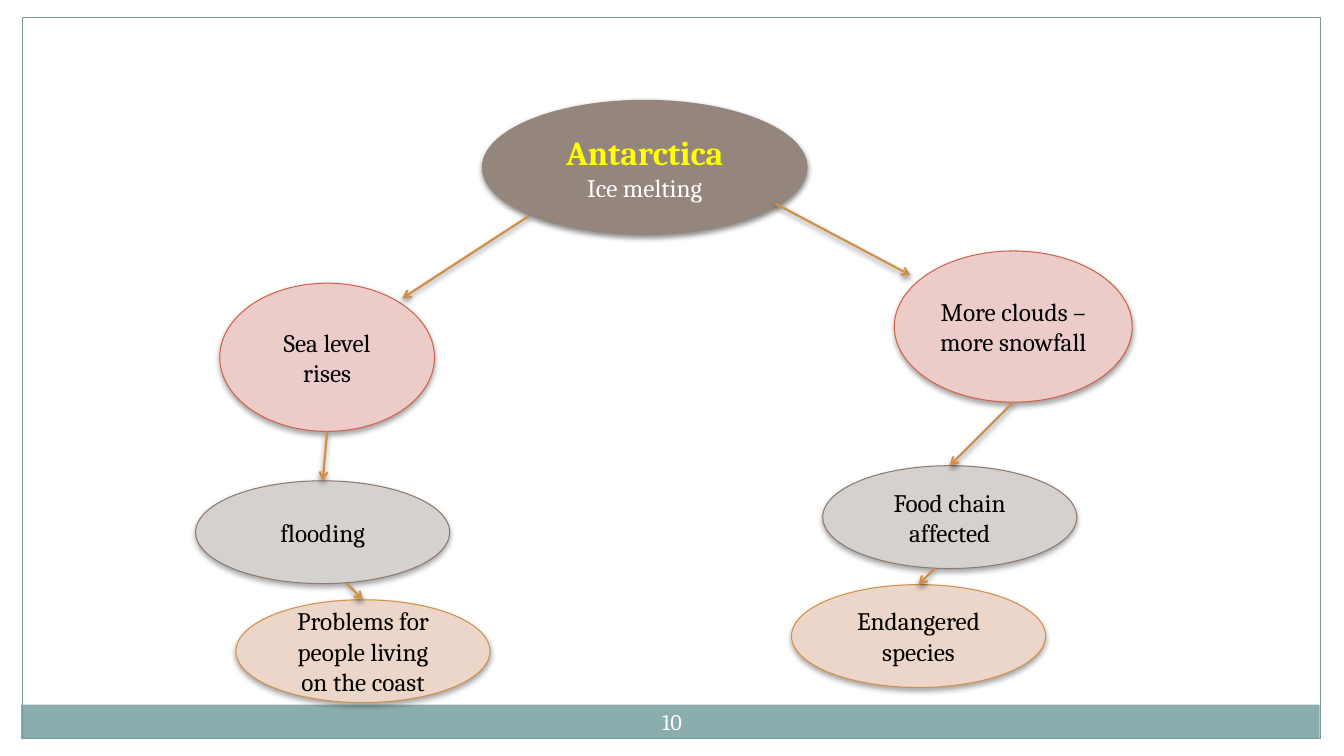
from collections import namedtuple
from dataclasses import dataclass

from lxml import etree
from pptx import Presentation
from pptx.dml.color import RGBColor
from pptx.enum.shapes import MSO_CONNECTOR, MSO_SHAPE
from pptx.enum.text import MSO_ANCHOR, PP_ALIGN
from pptx.oxml.ns import qn
from pptx.util import Pt

OVAL = MSO_SHAPE.OVAL
RECTANGLE = MSO_SHAPE.RECTANGLE
STRAIGHT = MSO_CONNECTOR.STRAIGHT
MIDDLE = MSO_ANCHOR.MIDDLE
CENTER = PP_ALIGN.CENTER

EMU_PER_PX = 9144
SLIDE_WIDTH, SLIDE_HEIGHT = 1333, 750
BLANK_LAYOUT = 6

Box = namedtuple("Box", "left top width height")
Paint = namedtuple("Paint", "fill line")
Step = namedtuple("Step", "text box paint arrow_shift")


@dataclass(frozen=True)
class Theme:
    font: str = "Cambria"
    heading_size: int = 24
    body_size: int = 18
    number_size: int = 16
    heading: str = "FFFF00"
    light: str = "FFFFFF"
    dark: str = "000000"
    band: str = "8CADAE"
    border: str = "7C999A"
    arrow: str = "D19049"
    cause: Paint = Paint("95867D", None)
    effect: Paint = Paint("ECCCC9", "D16349")
    impact: Paint = Paint("D5D1CF", "8C7B70")
    outcome: Paint = Paint("ECD6C9", "D19049")
    outline_width: float = 0.75
    arrow_width: float = 1.57
    strong_shadow: int = 45
    soft_shadow: int = 35


THEME = Theme()


def px(length):
    return round(length * EMU_PER_PX)


def rgb(color):
    return RGBColor.from_string(color)


def within(outer, inner):
    return Box(outer.left + inner.left, outer.top + inner.top,
               inner.width, inner.height)


def add_shadow(effects, opacity):
    shadow = etree.SubElement(effects, qn("a:outerShdw"), blurRad=str(Pt(4)),
                              dist=str(Pt(2)), dir="5400000", rotWithShape="0")
    color = etree.SubElement(shadow, qn("a:srgbClr"), val=THEME.dark)
    etree.SubElement(color, qn("a:alpha"), val=str(opacity * 1000))


def add_panel(slide, preset, box, paint):
    panel = slide.shapes.add_shape(preset, *map(px, box))
    panel.shadow.inherit = False
    if paint.fill:
        panel.fill.solid()
        panel.fill.fore_color.rgb = rgb(paint.fill)
    else:
        panel.fill.background()
    if paint.line:
        panel.line.color.rgb = rgb(paint.line)
        panel.line.width = Pt(THEME.outline_width)
    else:
        panel.line.fill.background()
    return panel


def write(frame, text, size, color):
    frame.text = text
    frame.word_wrap = True
    frame.vertical_anchor = MIDDLE
    for paragraph in frame.paragraphs:
        paragraph.alignment = CENTER
        for run in paragraph.runs:
            run.font.name = THEME.font
            run.font.size = Pt(size)
            run.font.color.rgb = rgb(color)


def add_bubble(slide, box, text, paint, color, opacity):
    bubble = add_panel(slide, OVAL, box, paint)
    add_shadow(bubble._element.spPr.find(qn("a:effectLst")), opacity)
    write(bubble.text_frame, text, THEME.body_size, color)
    return bubble


def add_arrow(slide, start, end):
    arrow = slide.shapes.add_connector(STRAIGHT, *map(px, (*start, *end)))
    arrow.line.color.rgb = rgb(THEME.arrow)
    arrow.line.width = Pt(THEME.arrow_width)
    etree.SubElement(arrow.line._get_or_add_ln(), qn("a:tailEnd"), type="arrow")
    effects = etree.SubElement(arrow._element.spPr, qn("a:effectLst"))
    add_shadow(effects, THEME.strong_shadow)


def add_frame(slide, box, number):
    band = within(box, Box(-1, 682, box.width, 34))
    add_panel(slide, RECTANGLE, band, Paint(THEME.band, None))
    add_panel(slide, RECTANGLE, box, Paint(None, THEME.border))
    number_box = within(box, Box(600, 675, 89, 48))
    page_number = slide.shapes.add_textbox(*map(px, number_box))
    frame = page_number.text_frame
    frame.margin_left = frame.margin_right = px(5)
    frame.margin_top = frame.margin_bottom = px(5)
    write(frame, number, THEME.number_size, THEME.light)


def add_cause(slide, box, heading, detail):
    cause = add_bubble(slide, box, f"{heading}\n{detail}", THEME.cause,
                       THEME.light, THEME.strong_shadow)
    heading_font = cause.text_frame.paragraphs[0].runs[0].font
    heading_font.size = Pt(THEME.heading_size)
    heading_font.color.rgb = rgb(THEME.heading)
    heading_font.bold = True


def add_branch(slide, box, steps):
    previous = None
    for step in steps:
        place = within(box, step.box)
        add_bubble(slide, place, step.text, step.paint, THEME.dark,
                   THEME.soft_shadow)
        if previous:
            start = (previous.left + previous.width / 2 + step.arrow_shift,
                     previous.top + previous.height)
            add_arrow(slide, start, (place.left + place.width / 2, place.top))
        previous = place


def main():
    deck = Presentation()
    deck.slide_width, deck.slide_height = px(SLIDE_WIDTH), px(SLIDE_HEIGHT)
    slide = deck.slides.add_slide(deck.slide_layouts[BLANK_LAYOUT])

    add_frame(slide, Box(22, 17, 1288, 716), "10")
    add_cause(slide, Box(478, 99, 323, 134), "Antarctica", "Ice melting")
    add_branch(slide, Box(194, 281, 292, 416), [
        Step("Sea level rises", Box(24, 0, 213, 147), THEME.effect, 0),
        Step("flooding", Box(0, 196, 252, 102), THEME.impact, 0),
        Step("Problems for people living on the coast",
             Box(40, 314, 252, 102), THEME.outcome, 24),
    ])
    add_branch(slide, Box(785, 249, 338, 433), [
        Step("More clouds – more snowfall", Box(102, 0, 236, 150),
             THEME.effect, 0),
        Step("Food chain affected", Box(31, 213, 252, 102), THEME.impact, 0),
        Step("Endangered species", Box(0, 331, 252, 102), THEME.outcome, -15),
    ])
    add_arrow(slide, (525, 214), (399, 296))
    add_arrow(slide, (769, 202), (903, 273))

    deck.save("out.pptx")


if __name__ == "__main__":
    main()
